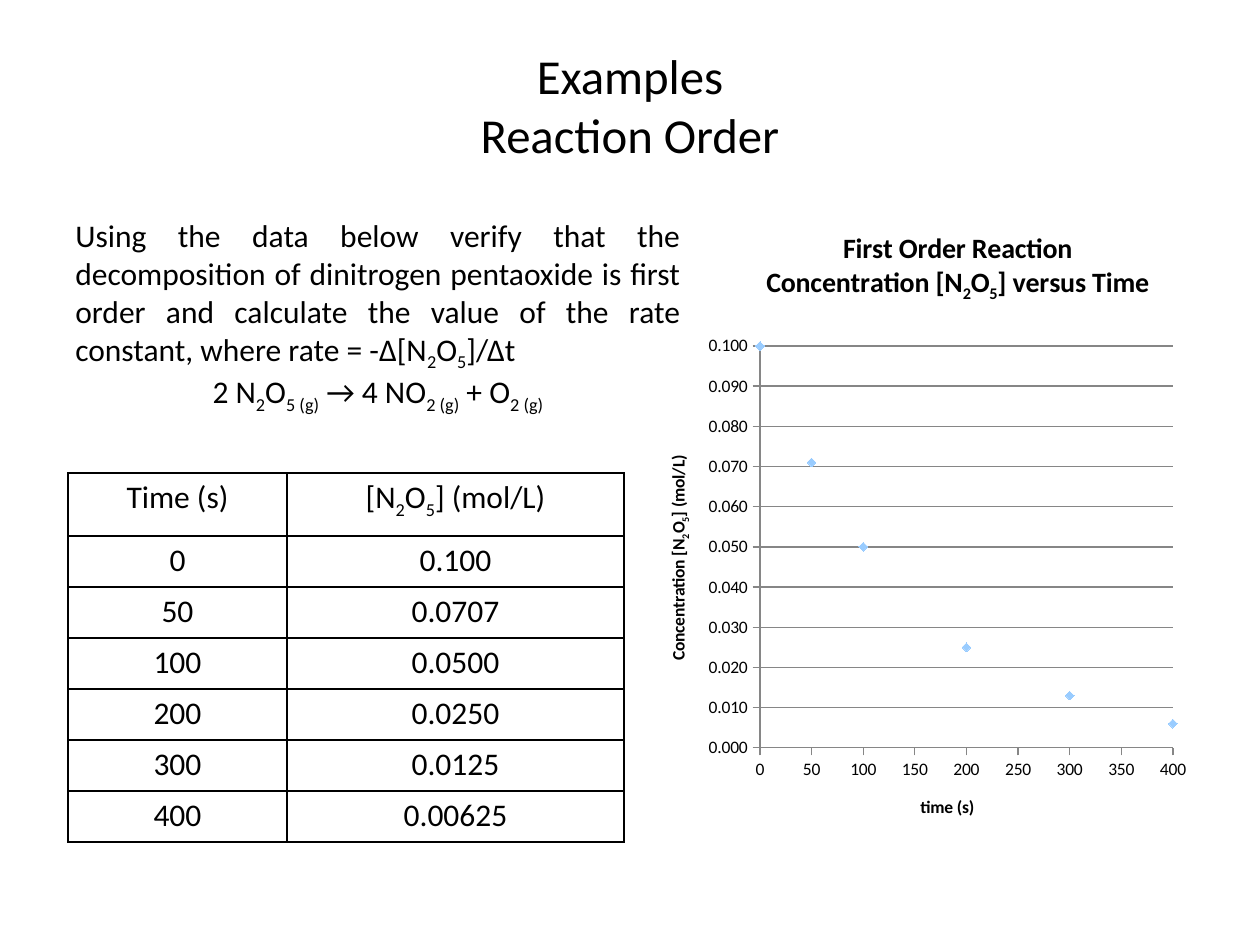
from dataclasses import dataclass
from typing import Any

from lxml.etree import SubElement
from pptx import Presentation
from pptx.chart.data import XyChartData
from pptx.dml.color import RGBColor
from pptx.enum.chart import XL_CHART_TYPE, XL_MARKER_STYLE, XL_TICK_MARK
from pptx.enum.text import MSO_ANCHOR, PP_ALIGN
from pptx.oxml import parse_xml
from pptx.oxml.ns import nsdecls, qn
from pptx.util import Pt

SCALE = 914400 / 126
FONT = "Calibri"
INK = "000000"
RULE = "868686"
MARK = "99CCFF"
DATA = [(0, "0.100"), (50, "0.0707"), (100, "0.0500"),
        (200, "0.0250"), (300, "0.0125"), (400, "0.00625")]


@dataclass
class Box:
    """A frame in px."""
    left: int
    top: int
    width: int
    height: int

    def emu(self) -> list[int]:
        """Return the frame in EMU."""
        return [px(n) for n in (self.left, self.top, self.width, self.height)]

    def share(self, part: "Box") -> dict[str, float]:
        """Return an inner frame as shares of this one."""
        return {"x": (part.left - self.left) / self.width,
                "y": (part.top - self.top) / self.height,
                "w": part.width / self.width,
                "h": part.height / self.height}


@dataclass
class Axis:
    """The scale and title of one chart axis."""
    title: str
    top: float
    step: float
    form: str
    grid: bool


def px(n: int) -> int:
    """Turn px into EMU."""
    return round(n * SCALE)


def color(code: str) -> RGBColor:
    """Turn a hex string into a colour."""
    return RGBColor.from_string(code)


def apply(item: Any, **values: Any) -> None:
    """Set each named value on an item."""
    for name, value in values.items():
        setattr(item, name, value)


def style(font: Any, size: float, bold: bool = False) -> None:
    """Format a font."""
    apply(font, name=FONT, size=Pt(size), bold=bold)
    font.color.rgb = color(INK)


def write(para: Any, text: str, size: float, align: Any = PP_ALIGN.CENTER,
          bold: bool = False) -> None:
    """Fill a paragraph, lowering the parts between tildes."""
    para.alignment = align
    for i, part in enumerate(text.split("~")):
        if part:
            run = para.add_run()
            run.text = part
            style(run.font, size, bold)
            if i % 2:
                run._r.get_or_add_rPr().set("baseline", "-25000")


def fill(frame: Any, lines: list[str], size: float, **kind: Any) -> None:
    """Write one paragraph for each line."""
    for i, line in enumerate(lines):
        para = frame.add_paragraph() if i else frame.paragraphs[0]
        write(para, line, size, **kind)


def border(cell: Any) -> None:
    """Draw thin lines on all sides of a cell."""
    prop = cell._tc.get_or_add_tcPr()
    for i, side in enumerate(("lnL", "lnR", "lnT", "lnB")):
        prop.insert(i, parse_xml(
            f'<a:{side} {nsdecls("a")} w="12700"><a:solidFill>'
            f'<a:srgbClr val="{INK}"/></a:solidFill></a:{side}>'))


def add_grid(slide: Any, box: Box, cols: list[int], rows: list[int]) -> None:
    """Add the table of measured values."""
    cells = [("Time (s)", "[N~2~O~5~] (mol/L)"), *DATA]
    table = slide.shapes.add_table(len(rows), len(cols), *box.emu()).table
    apply(table, first_row=False, horz_banding=False)
    for col, width in zip(table.columns, cols):
        col.width = px(width)
    for row, height, texts in zip(table.rows, rows, cells):
        row.height = px(height)
        for cell, text in zip(row.cells, texts):
            apply(cell, margin_left=px(18), margin_right=px(18),
                  margin_top=px(6), margin_bottom=px(6))
            write(cell.text_frame.paragraphs[0], str(text), 18)
            cell.fill.background()
            border(cell)


def set_axis(axis: Any, plan: Axis) -> None:
    """Format a chart axis."""
    apply(axis, minimum_scale=0, maximum_scale=plan.top,
          major_unit=plan.step, major_tick_mark=XL_TICK_MARK.OUTSIDE,
          has_major_gridlines=plan.grid)
    apply(axis.tick_labels, number_format=plan.form,
          number_format_is_linked=False)
    style(axis.tick_labels.font, 10)
    fill(axis.axis_title.text_frame, [plan.title], 10, bold=True)
    lines = [axis.format.line]
    if plan.grid:
        lines.append(axis.major_gridlines.format.line)
    for line in lines:
        line.color.rgb = color(RULE)
        line.width = Pt(0.75)


def place(node: Any, spot: int, **values: Any) -> None:
    """Give a chart part a fixed layout, as its child number spot."""
    for old in node.findall(qn("c:layout")):
        node.remove(old)
    layout = parse_xml(f'<c:layout {nsdecls("c")}/>')
    node.insert(spot, layout)
    manual = SubElement(layout, qn("c:manualLayout"))
    for name, value in values.items():
        SubElement(manual, qn(f"c:{name}")).set("val", str(value))


def add_plot(slide: Any, box: Box, inner: Box) -> None:
    """Add the scatter chart of concentration over time."""
    data = XyChartData()
    points = data.add_series("Series 1")
    for time, level in DATA:
        points.add_data_point(time, round(float(level), 3))
    chart = slide.shapes.add_chart(
        XL_CHART_TYPE.XY_SCATTER, *box.emu(), data).chart
    style(chart.font, 10)
    apply(chart, has_legend=False, has_title=True)
    fill(chart.chart_title.text_frame,
         ["First Order Reaction", "Concentration [N~2~O~5~] versus Time"],
         16, bold=True)
    chart.plots[0].vary_by_categories = False
    set_axis(chart.category_axis, Axis("time (s)", 400, 50, "0", False))
    set_axis(chart.value_axis, Axis("Concentration [N~2~O~5~] (mol/L)",
                                    0.1, 0.01, "0.000", True))
    series = chart.plots[0].series[0]
    series.smooth = False
    series.format.line.fill.background()
    mark = series.marker
    apply(mark, style=XL_MARKER_STYLE.DIAMOND, size=5)
    mark.format.fill.solid()
    mark.format.fill.fore_color.rgb = color(MARK)
    mark.format.line.color.rgb = color(MARK)
    root = chart._chartSpace.chart
    place(root.plotArea, 0, layoutTarget="inner", xMode="edge", yMode="edge",
          **box.share(inner))
    place(root.find(qn("c:title")), 1, xMode="edge", yMode="edge",
          x=0.22, y=0.01)


def main() -> None:
    """Build and save the slide."""
    deck = Presentation()
    apply(deck, slide_width=px(1260), slide_height=px(945))
    slide = deck.slides.add_slide(deck.slide_layouts[5])

    title = slide.shapes.title
    names = ("left", "top", "width", "height")
    apply(title, **dict(zip(names, Box(63, 38, 1134, 158).emu())))
    apply(title.text_frame, vertical_anchor=MSO_ANCHOR.MIDDLE,
          margin_bottom=px(31), word_wrap=True)
    fill(title.text_frame, ["Examples", "Reaction Order"], 27.9)

    add_grid(slide, Box(68, 473, 556, 369), [219, 337], [63] + [51] * 6)
    add_plot(slide, Box(640, 220, 557, 624), Box(760, 346, 413, 402))

    body = slide.shapes.add_textbox(*Box(63, 210, 630, 204).emu()).text_frame
    body.word_wrap = True
    write(body.paragraphs[0],
          "Using the data below verify that the decomposition of dinitrogen "
          "pentaoxide is first order and calculate the value of the rate "
          "constant, where rate = -Δ[N~2~O~5~]/Δt", 18, PP_ALIGN.JUSTIFY)
    write(body.add_paragraph(),
          "2 N~2~O~5 (g)~ → 4 NO~2 (g)~ + O~2 (g)~", 18)
    deck.save("out.pptx")


if __name__ == "__main__":
    main()
